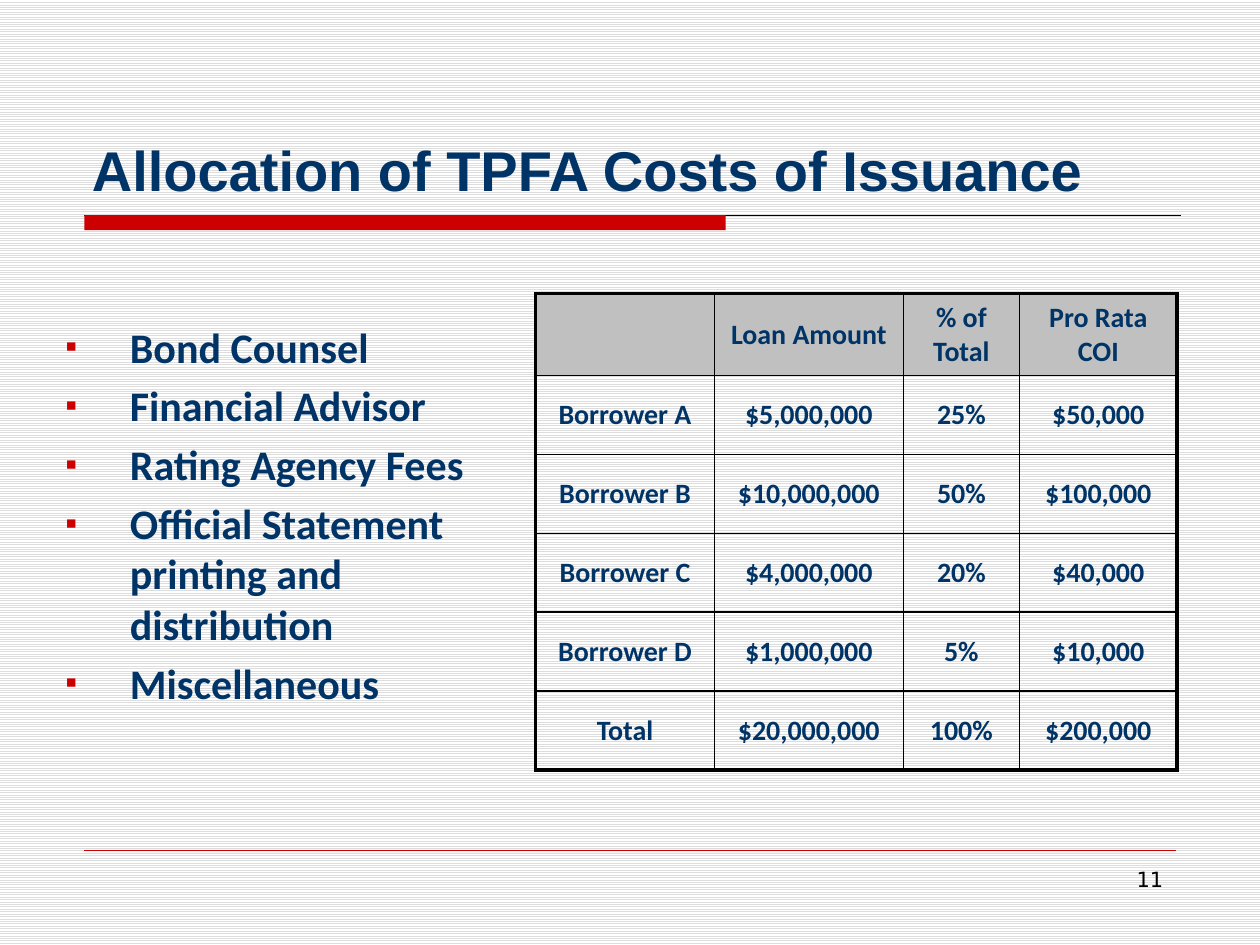
"""Build the slide on the allocation of issuance costs."""
from lxml import etree
from pptx import Presentation
from pptx.dml.color import RGBColor
from pptx.enum.dml import MSO_PATTERN
from pptx.enum.shapes import MSO_CONNECTOR, MSO_SHAPE
from pptx.enum.text import MSO_ANCHOR, MSO_AUTO_SIZE, PP_ALIGN
from pptx.oxml.ns import qn
from pptx.util import Cm, Pt

TITLE = "Allocation of TPFA Costs of Issuance"
COSTS = [
    "Bond Counsel",
    "Financial Advisor",
    "Rating Agency Fees",
    "Official Statement printing and distribution",
    "Miscellaneous",
]
LOANS = [
    ("", "Loan Amount", "% of Total", "Pro Rata COI"),
    ("Borrower A", "$5,000,000", "25%", "$50,000"),
    ("Borrower B", "$10,000,000", "50%", "$100,000"),
    ("Borrower C", "$4,000,000", "20%", "$40,000"),
    ("Borrower D", "$1,000,000", "5%", "$10,000"),
    ("Total", "$20,000,000", "100%", "$200,000"),
]
PAGE = "11"
WIDTHS = (3.6, 3.81, 2.34, 3.18)
HEAD, ROW = 1.65, 1.59
THIN, THICK = 1, 2.25

NAVY = RGBColor(0x00, 0x33, 0x66)
RED = RGBColor(0xCC, 0x00, 0x00)
GREY = RGBColor(0xC0, 0xC0, 0xC0)
PALE = RGBColor(0xDD, 0xDD, 0xDD)
WHITE = RGBColor(0xFF, 0xFF, 0xFF)
BLACK = RGBColor(0x00, 0x00, 0x00)

LEFT, CENTER, RIGHT = PP_ALIGN.LEFT, PP_ALIGN.CENTER, PP_ALIGN.RIGHT
MIDDLE, BOTTOM = MSO_ANCHOR.MIDDLE, MSO_ANCHOR.BOTTOM
NO_FIT = MSO_AUTO_SIZE.NONE
STRIPES = MSO_PATTERN.LIGHT_HORIZONTAL
STRAIGHT = MSO_CONNECTOR.STRAIGHT
RECT = MSO_SHAPE.RECTANGLE


def add_run(para, text, font, size, color=NAVY, bold=True, align=LEFT):
    para.alignment = align
    run = para.add_run()
    run.text = text
    run.font.name = font
    run.font.size = Pt(size)
    run.font.bold = bold
    run.font.color.rgb = color


def add_box(slide, *place):
    frame = slide.shapes.add_textbox(*map(Cm, place)).text_frame
    frame.word_wrap = True
    return frame


def add_line(slide, left, right, top, color, width):
    line = slide.shapes.add_connector(
        STRAIGHT, Cm(left), Cm(top), Cm(right), Cm(top))
    line.line.color.rgb = color
    line.line.width = Pt(width)
    etree.SubElement(line._element.spPr, qn("a:effectLst"))


def add_bullet(para):
    props = para._p.get_or_add_pPr()
    props.set("marL", str(Cm(1.3)))
    props.set("indent", str(-Cm(1.3)))
    tint = etree.SubElement(props, qn("a:buClr"))
    etree.SubElement(tint, qn("a:srgbClr"), val=str(RED))
    etree.SubElement(props, qn("a:buSzPct"), val="80000")
    etree.SubElement(props, qn("a:buFont"), typeface="Arial")
    etree.SubElement(props, qn("a:buChar"), char="▪")


def add_edge(cell, side, width):
    props = cell._tc.get_or_add_tcPr()
    edge = etree.SubElement(props, qn("a:ln" + side), w=str(Pt(width)))
    fill = etree.SubElement(edge, qn("a:solidFill"))
    etree.SubElement(fill, qn("a:srgbClr"), val=str(BLACK))


def add_title(slide):
    title = slide.shapes.title
    title.left, title.top = Cm(1.6), Cm(0.84)
    title.width, title.height = Cm(22.23), Cm(3.38)
    frame = title.text_frame
    frame.auto_size = NO_FIT
    frame.vertical_anchor = BOTTOM
    add_run(frame.paragraphs[0], TITLE, "Arial", 32)


def add_rules(slide):
    add_line(slide, 1.7, 23.8, 4.34, BLACK, 0.75)
    bar = slide.shapes.add_shape(RECT, Cm(1.7), Cm(4.34), Cm(12.93), Cm(0.3))
    bar.shadow.inherit = False
    bar.fill.solid()
    bar.fill.fore_color.rgb = RED
    bar.line.fill.background()
    add_line(slide, 1.7, 23.7, 17.15, RED, 0.25)


def add_costs(slide):
    frame = add_box(slide, 1.07, 6.35, 9.32, 11.86)
    for i, cost in enumerate(COSTS):
        para = frame.add_paragraph() if i else frame.paragraphs[0]
        para.space_before = Pt(4.8)
        add_bullet(para)
        add_run(para, cost, "Calibri", 24)


def add_loans(slide):
    rows, cols = len(LOANS), len(WIDTHS)
    high = HEAD + ROW * (rows - 1)
    table = slide.shapes.add_table(
        rows, cols, Cm(10.8), Cm(5.92), Cm(sum(WIDTHS)), Cm(high)).table
    table.first_row = table.horz_banding = False
    for col, width in zip(table.columns, WIDTHS):
        col.width = Cm(width)
    for r, loan in enumerate(LOANS):
        table.rows[r].height = Cm(ROW if r else HEAD)
        for c, text in enumerate(loan):
            cell = table.cell(r, c)
            cell.vertical_anchor = MIDDLE
            outer = {"L": c == 0, "R": c == cols - 1,
                     "T": r == 0, "B": r == rows - 1}
            for side, edge in outer.items():
                add_edge(cell, side, THICK if edge else THIN)
            if r:
                cell.fill.background()
            else:
                cell.fill.solid()
                cell.fill.fore_color.rgb = GREY
            if text:
                para = cell.text_frame.paragraphs[0]
                para.space_before = Pt(3.2)
                add_run(para, text, "Calibri", 16, align=CENTER)


def main():
    deck = Presentation()
    deck.slide_width, deck.slide_height = Cm(25.4), Cm(19.05)
    slide = deck.slides.add_slide(deck.slide_layouts[5])
    back = slide.background.fill
    back.patterned()
    back.pattern = STRIPES
    back.fore_color.rgb = PALE
    back.back_color.rgb = WHITE
    add_rules(slide)
    add_title(slide)
    add_costs(slide)
    add_loans(slide)
    page = add_box(slide, 18.2, 17.35, 5.5, 1.32).paragraphs[0]
    add_run(page, PAGE, "DejaVu Sans", 12, BLACK, False, RIGHT)
    deck.save("out.pptx")


if __name__ == "__main__":
    main()
